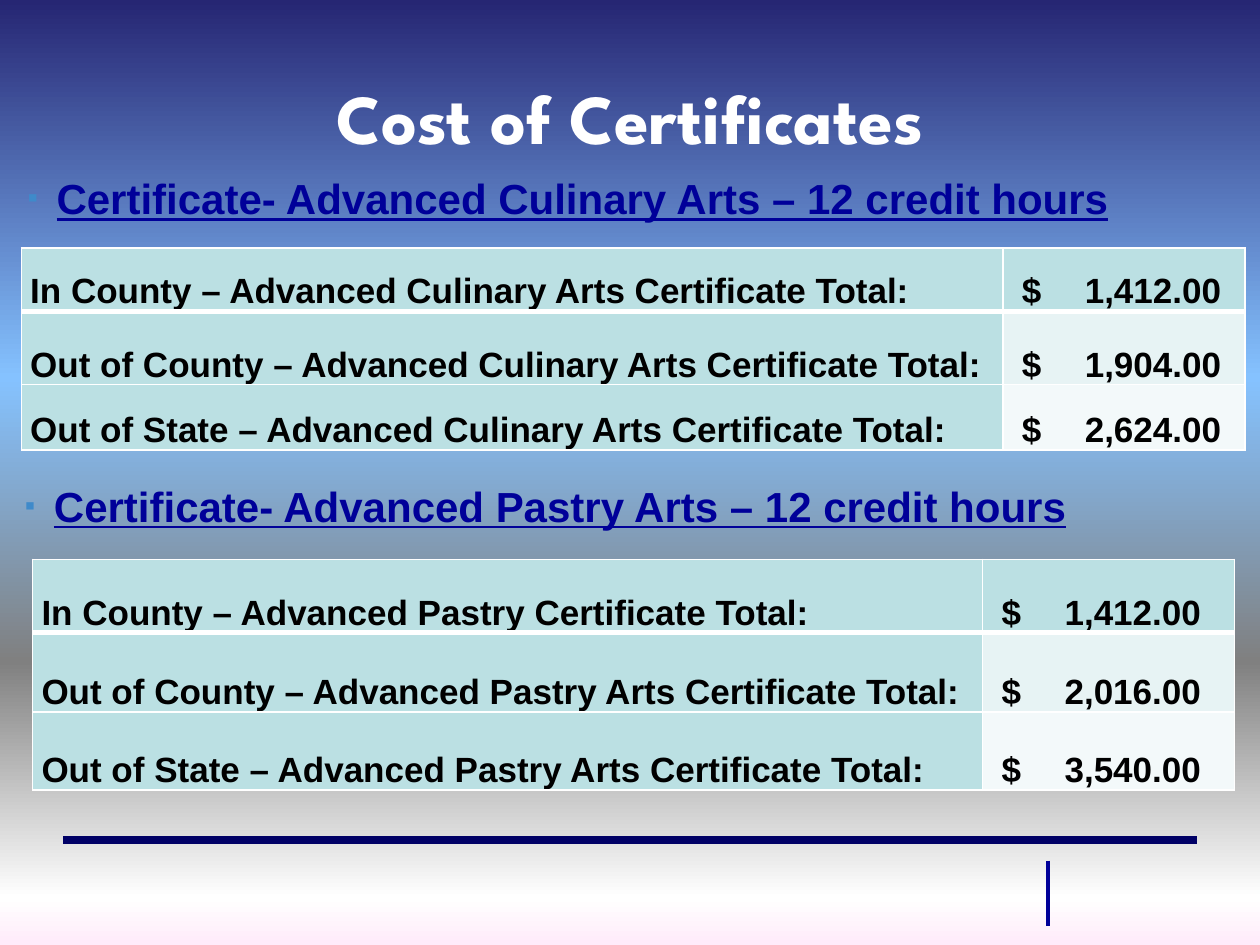
import pptx
import pptx.dml.color
import pptx.enum.shapes
import pptx.enum.text
import pptx.oxml
import pptx.oxml.ns
import pptx.util

Inches = pptx.util.Inches
Pt = pptx.util.Pt
Anchor = pptx.enum.text.MSO_ANCHOR
qn = pptx.oxml.ns.qn

COLORS = {
    "title": "FFFFFF", "head": "000099", "bullet": "3F8ACA",
    "rule": "000066", "tick": "000099", "text": "000000",
    "edge": "FFFFFF", "label": "BBE0E3", "mid": "E7F3F4", "pale": "F3F9FA",
}
STOPS = [(0, "262673"), (40, "85C2FF"), (70, "808080"), (95, "FFFFFF"), (100, "FFEBFA")]


def node(xml):
    return pptx.oxml.parse_xml(xml.replace(">", f" {pptx.oxml.ns.nsdecls('a')}>", 1))


def color(name):
    return pptx.dml.color.RGBColor.from_string(COLORS[name])


class Deck:
    font = "Arial"

    def __init__(self):
        self.prs = pptx.Presentation()
        self.prs.slide_width = Inches(10)
        self.prs.slide_height = Inches(7.5)
        self.slide = self.prs.slides.add_slide(self.prs.slide_layouts[6])

    def backdrop(self, stops):
        fill = self.slide.background.fill
        fill.gradient()
        fill.gradient_angle = 270
        marks = "".join(
            f'<a:gs pos="{at * 1000}"><a:srgbClr val="{tone}"/></a:gs>' for at, tone in stops)
        old = self.slide.element.find(".//" + qn("a:gsLst"))
        old.getparent().replace(old, node(f"<a:gsLst>{marks}</a:gsLst>"))

    def line(self, start, end, tone, width):
        kind = pptx.enum.shapes.MSO_CONNECTOR.STRAIGHT
        rule = self.slide.shapes.add_connector(kind, *map(Inches, start + end))
        rule.line.color.rgb = color(tone)
        rule.line.width = Pt(width)
        rule.element.spPr.append(node("<a:effectLst></a:effectLst>"))

    def run(self, para, text, size, tone, font=None, under=None):
        run = para.add_run()
        run.text = text
        run.font.name = font or self.font
        run.font.size = Pt(size)
        run.font.bold = True
        run.font.underline = under
        run.font.color.rgb = color(tone)

    def frame(self, box):
        frame = self.slide.shapes.add_textbox(*map(Inches, box)).text_frame
        frame.word_wrap = True
        return frame

    def title(self, text, box):
        frame = self.frame(box)
        frame.vertical_anchor = Anchor.MIDDLE
        para = frame.paragraphs[0]
        para.alignment = pptx.enum.text.PP_ALIGN.CENTER
        self.run(para, text, 40, "title", "League Spartan")

    def head(self, text, box):
        frame = self.frame(box)
        frame.margin_right = 0
        para = frame.paragraphs[0]
        props = para._p.get_or_add_pPr()
        props.set("marL", str(Inches(0.23)))
        props.set("indent", str(-Inches(0.23)))
        props.append(node(f'<a:buClr><a:srgbClr val="{COLORS["bullet"]}"/></a:buClr>'))
        props.append(node('<a:buSzPct val="70000"></a:buSzPct>'))
        props.append(node('<a:buFont typeface="Arial"></a:buFont>'))
        props.append(node('<a:buChar char="▪"></a:buChar>'))
        para.line_spacing = 0.8
        self.run(para, text, 24, "head", under=True)

    def edges(self, cell, row):
        props = cell._tc.get_or_add_tcPr()
        widths = {"lnL": 1, "lnR": 1, "lnT": 3 if row == 1 else 1, "lnB": 3 if row == 0 else 1}
        for spot, (tag, width) in enumerate(widths.items()):
            props.insert(spot, node(
                f'<a:{tag} w="{Pt(width)}"><a:solidFill><a:srgbClr val="{COLORS["edge"]}"/>'
                f'</a:solidFill></a:{tag}>'))

    def cell(self, cell, text, tone, row):
        cell.margin_left = cell.margin_right = Inches(0.07)
        cell.margin_top = cell.margin_bottom = 0
        cell.vertical_anchor = Anchor.BOTTOM
        cell.fill.solid()
        cell.fill.fore_color.rgb = color(tone)
        self.edges(cell, row)
        para = cell.text_frame.paragraphs[0]
        para.line_spacing = 1.5
        if "\t" in text:
            props = para._p.get_or_add_pPr()
            props.set("marL", str(Inches(0.08)))
            props.set("indent", "0")
            props.append(node(
                f'<a:tabLst><a:tab pos="{Inches(0.66)}" algn="l"/></a:tabLst>'))
        self.run(para, text, 20, "text")

    def table(self, left, top, cols, rows, data):
        box = map(Inches, (left, top, sum(cols), sum(rows)))
        grid = self.slide.shapes.add_table(len(rows), len(cols), *box).table
        for col, width in zip(grid.columns, cols):
            col.width = Inches(width)
        tones = ("label", "mid", "pale")
        for row, (name, cost) in enumerate(data):
            grid.rows[row].height = Inches(rows[row])
            self.cell(grid.cell(row, 0), f"{name} Certificate Total:", "label", row)
            self.cell(grid.cell(row, 1), f"$\t{cost}", tones[row], row)


def main():
    deck = Deck()
    deck.backdrop(STOPS)
    deck.line((0.5, 6.67), (9.5, 6.67), "rule", 4.5)
    deck.line((8.32, 6.83), (8.32, 7.35), "tick", 2.25)
    deck.title("Cost of Certificates", (0.5, 0.3, 9, 1.25))
    deck.table(0.17, 1.97, (7.79, 1.92), (0.5, 0.58, 0.52), [
        ("In County – Advanced Culinary Arts", "1,412.00"),
        ("Out of County – Advanced Culinary Arts", "1,904.00"),
        ("Out of State – Advanced Culinary Arts", "2,624.00"),
    ])
    deck.table(0.26, 4.44, (7.54, 2), (0.58, 0.63, 0.62), [
        ("In County – Advanced Pastry", "1,412.00"),
        ("Out of County – Advanced Pastry Arts", "2,016.00"),
        ("Out of State – Advanced Pastry Arts", "3,540.00"),
    ])
    deck.head("Certificate- Advanced Culinary Arts – 12 credit hours", (0.12, 1.4, 8.79, 0.42))
    deck.head("Certificate- Advanced Pastry Arts – 12 credit hours", (0.1, 3.84, 8.47, 0.42))
    deck.prs.save("out.pptx")


if __name__ == "__main__":
    main()
